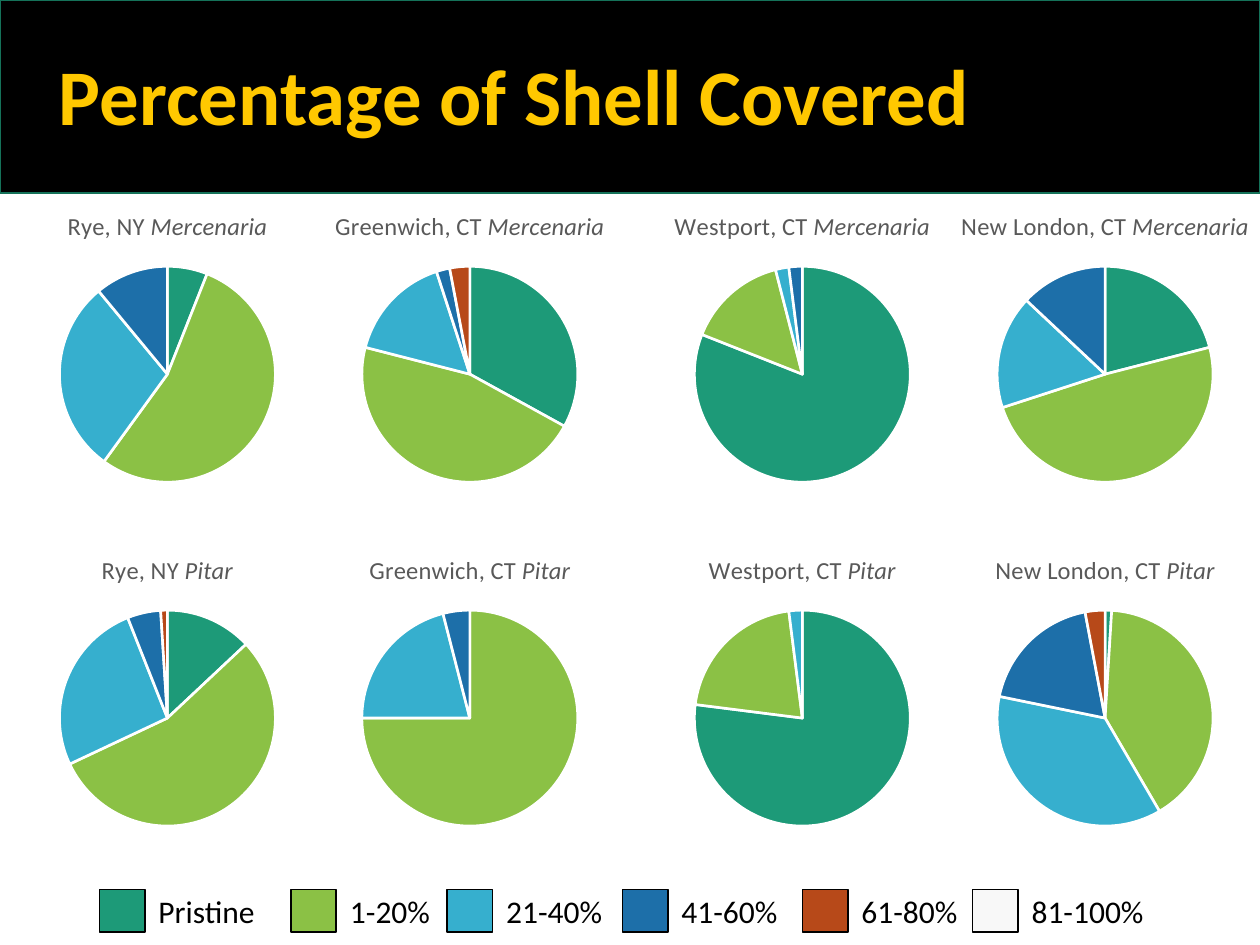
"""Build the slide of pie charts showing how much of each shell is covered."""
from dataclasses import dataclass

from lxml.etree import SubElement
from pptx import Presentation
from pptx.chart.data import CategoryChartData
from pptx.dml.color import RGBColor
from pptx.enum.chart import XL_CHART_TYPE
from pptx.enum.shapes import MSO_SHAPE
from pptx.enum.text import MSO_ANCHOR, MSO_AUTO_SIZE
from pptx.oxml import parse_xml
from pptx.oxml.ns import nsdecls, qn
from pptx.slide import Slide
from pptx.util import Pt


@dataclass(frozen=True)
class Theme:
    font: str = "Calibri"
    banner: str = "000000"
    banner_edge: str = "157259"
    headline: str = "FFC800"
    ink: str = "000000"
    caption: str = "595959"
    gap: str = "FFFFFF"
    slices: tuple[str, ...] = ("1D9A78", "8BC145", "36AFCE", "1D6FA9", "B74919", "F19D19")
    last_key: str = "F8F8F8"
    headline_size: float = 45
    caption_size: float = 14
    key_size: float = 18
    chart_size: float = 10


@dataclass(frozen=True)
class Pie:
    place: str
    genus: str
    center: float
    top: float
    width: float
    values: tuple[int, ...]


@dataclass(frozen=True)
class Key:
    label: str
    left: float
    label_width: float
    color: str


THEME = Theme()
SLIDE_WIDTH, SLIDE_HEIGHT = 720, 540
BANNER_HEIGHT = 110.2
PIE_HEIGHT, PIE_DIAMETER, PIE_DROP = 176.4, 123.4, 42
COLUMNS = (95.7, 268.5, 458.5, 631.5)
UPPER, LOWER = 110.2, 306.7
KEY_TOP, KEY_WIDTH, KEY_HEIGHT = 508.3, 25.9, 24.5
LABEL_TOP, LABEL_HEIGHT, LABEL_OFFSET = 506.2, 28.8, 26.6

PIES = (
    Pie("Rye, NY", "Mercenaria", COLUMNS[0], UPPER, 191.5, (6, 54, 29, 11, 0, 0)),
    Pie("Greenwich, CT", "Mercenaria", COLUMNS[1], UPPER, 214.6, (33, 46, 16, 2, 3, 0)),
    Pie("Westport, CT", "Mercenaria", COLUMNS[2], UPPER, 218.9, (81, 15, 2, 2, 0, 0)),
    Pie("New London, CT", "Mercenaria", COLUMNS[3], UPPER, 265, (21, 49, 17, 13, 0, 0)),
    Pie("Rye, NY", "Pitar", COLUMNS[0], LOWER, 215.3, (13, 55, 26, 5, 1, 0)),
    Pie("Greenwich, CT", "Pitar", COLUMNS[1], LOWER, 234.7, (0, 75, 21, 4, 0, 0)),
    Pie("Westport, CT", "Pitar", COLUMNS[2], LOWER, 231.8, (77, 21, 2, 0, 0, 0)),
    Pie("New London, CT", "Pitar", COLUMNS[3], LOWER, 232.6, (1, 41, 37, 19, 3)),
)
KEYS = (
    Key("Pristine", 56.9, 82.1, THEME.slices[0]),
    Key("1-20%", 166.3, 61.9, THEME.slices[1]),
    Key("21-40%", 255.6, 72.7, THEME.slices[2]),
    Key("41-60%", 355.7, 74.9, THEME.slices[3]),
    Key("61-80%", 458.6, 69.8, THEME.slices[4]),
    Key("81-100%", 555.8, 82.8, THEME.last_key),
)


def write(paragraph, text: str, *, size: float, color: str,
          bold: bool = False, italic: bool = False) -> None:
    """Append one formatted run to a paragraph."""
    run = paragraph.add_run()
    run.text = text
    run.font.name = THEME.font
    run.font.size = Pt(size)
    run.font.bold = bold
    run.font.italic = italic
    run.font.color.rgb = RGBColor.from_string(color)


def draw_box(slide: Slide, left: float, top: float, width: float, height: float,
             fill: str, edge: str) -> None:
    """Draw a filled rectangle with a one-point edge."""
    box = slide.shapes.add_shape(
        MSO_SHAPE.RECTANGLE, Pt(left), Pt(top), Pt(width), Pt(height))
    box.shadow.inherit = False
    box.fill.solid()
    box.fill.fore_color.rgb = RGBColor.from_string(fill)
    box.line.color.rgb = RGBColor.from_string(edge)
    box.line.width = Pt(1)


def add_frame(slide: Slide, left: float, top: float, width: float, height: float):
    """Add a wrapping text box and return its text frame."""
    frame = slide.shapes.add_textbox(Pt(left), Pt(top), Pt(width), Pt(height)).text_frame
    frame.word_wrap = True
    return frame


def draw_headline(slide: Slide) -> None:
    """Draw the banner with the slide's headline."""
    draw_box(slide, 0, 0, SLIDE_WIDTH, BANNER_HEIGHT, THEME.banner, THEME.banner_edge)
    frame = add_frame(slide, 26.6, 5, 620.6, 104.4)
    frame.vertical_anchor = MSO_ANCHOR.MIDDLE
    headline = frame.paragraphs[0]
    headline.line_spacing = 0.9
    write(headline, "Percentage of Shell Covered", size=THEME.headline_size,
          color=THEME.headline, bold=True)


def place_plot(chart, width: float) -> None:
    """Give the pie a fixed diameter, centred across its chart."""
    plot_area = chart.element.find(".//" + qn("c:plotArea"))
    for automatic in plot_area.findall(qn("c:layout")):
        plot_area.remove(automatic)
    layout = parse_xml(f"<c:layout {nsdecls('c')}><c:manualLayout/></c:layout>")
    settings = {
        "layoutTarget": "inner",
        "xMode": "edge",
        "yMode": "edge",
        "x": (1 - PIE_DIAMETER / width) / 2,
        "y": PIE_DROP / PIE_HEIGHT,
        "w": PIE_DIAMETER / width,
        "h": PIE_DIAMETER / PIE_HEIGHT,
    }
    for tag, value in settings.items():
        SubElement(layout[0], qn(f"c:{tag}")).set("val", str(value))
    plot_area.insert(0, layout)


def draw_pie(slide: Slide, pie: Pie) -> None:
    """Draw one titled pie chart."""
    shares = CategoryChartData()
    shares.categories = [str(number + 1) for number in range(len(pie.values))]
    shares.add_series("Series 1", pie.values)
    chart = slide.shapes.add_chart(
        XL_CHART_TYPE.PIE, Pt(pie.center - pie.width / 2), Pt(pie.top),
        Pt(pie.width), Pt(PIE_HEIGHT), shares).chart
    chart.has_legend = False
    chart.font.name = THEME.font
    chart.font.size = Pt(THEME.chart_size)
    chart.font.color.rgb = RGBColor.from_string(THEME.ink)
    chart.has_title = True
    caption = chart.chart_title.text_frame.paragraphs[0]
    style = {"size": THEME.caption_size, "color": THEME.caption}
    write(caption, f"{pie.place} ", **style)
    write(caption, pie.genus, italic=True, **style)
    chart.chart_title.include_in_layout = False
    plot = chart.plots[0]
    plot.vary_by_categories = True
    for index, color in enumerate(THEME.slices[:len(pie.values)]):
        part = plot.series[0].points[index].format
        part.fill.solid()
        part.fill.fore_color.rgb = RGBColor.from_string(color)
        part.line.color.rgb = RGBColor.from_string(THEME.gap)
        part.line.width = Pt(1.5)
    place_plot(chart, pie.width)


def draw_key(slide: Slide, key: Key) -> None:
    """Draw one colour key with its label."""
    draw_box(slide, key.left, KEY_TOP, KEY_WIDTH, KEY_HEIGHT, key.color, THEME.ink)
    frame = add_frame(slide, key.left + LABEL_OFFSET, LABEL_TOP, key.label_width, LABEL_HEIGHT)
    frame.auto_size = MSO_AUTO_SIZE.SHAPE_TO_FIT_TEXT
    write(frame.paragraphs[0], key.label, size=THEME.key_size, color=THEME.ink)


def main() -> None:
    """Build and save the slide."""
    deck = Presentation()
    deck.slide_width, deck.slide_height = Pt(SLIDE_WIDTH), Pt(SLIDE_HEIGHT)
    slide = deck.slides.add_slide(deck.slide_layouts[6])
    draw_headline(slide)
    for pie in PIES:
        draw_pie(slide, pie)
    for key in KEYS:
        draw_key(slide, key)
    deck.save("out.pptx")


if __name__ == "__main__":
    main()
